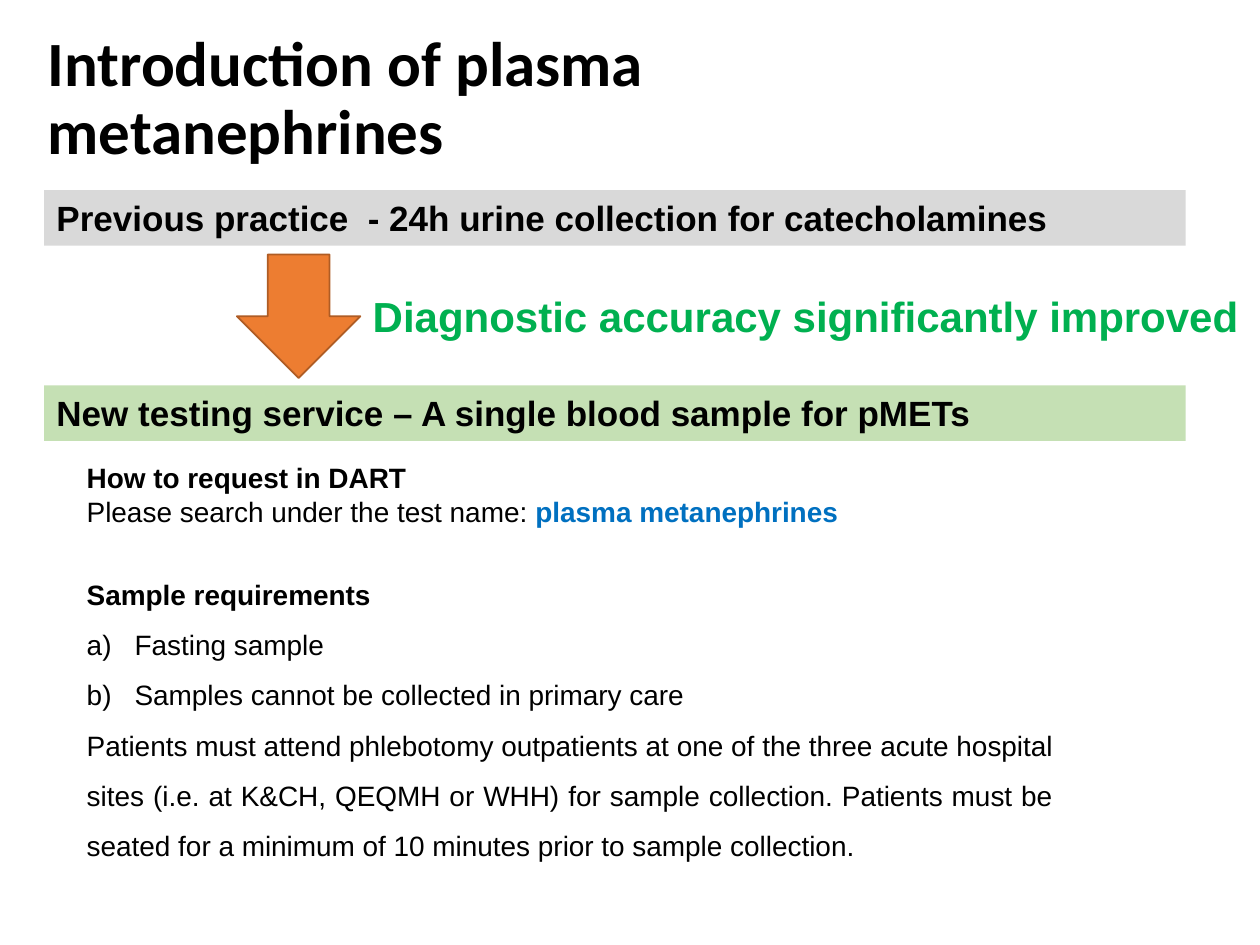
from lxml import etree
from pptx import Presentation
from pptx.dml.color import RGBColor
from pptx.enum.shapes import MSO_SHAPE
from pptx.enum.text import MSO_ANCHOR, PP_ALIGN
from pptx.oxml.ns import qn
from pptx.util import Inches, Pt

RECTANGLE, DOWN_ARROW = MSO_SHAPE.RECTANGLE, MSO_SHAPE.DOWN_ARROW
TOP, MIDDLE = MSO_ANCHOR.TOP, MSO_ANCHOR.MIDDLE
LEFT, JUSTIFY = PP_ALIGN.LEFT, PP_ALIGN.JUSTIFY
COLUMNS, ROWS = 100, 75
BLANK_LAYOUT = 6
BLACK, GREY, PALE_GREEN = "000000", "D9D9D9", "C5E0B4"
GREEN, BLUE, ORANGE, BROWN = "00B050", "0070C0", "ED7D31", "AF5C24"


def color(value):
    return RGBColor.from_string(value)


def write(paragraph, text, size=16, font="Arial", fill=BLACK, bold=False):
    run = paragraph.add_run()
    run.text = text
    run.font.size, run.font.name, run.font.bold = Pt(size), font, bold
    run.font.color.rgb = color(fill)


def letter_item(paragraph, indent=0.38):
    """Number the paragraph a), b), ... with a hanging indent."""
    properties = paragraph._p.get_or_add_pPr()
    properties.set("marL", str(Inches(indent)))
    properties.set("indent", str(-Inches(indent)))
    bullet = etree.SubElement(properties, qn("a:buAutoNum"))
    bullet.set("type", "alphaLcParenR")


class SlideBuilder:
    """Holds the slide and its grid; boxes are (column, row, columns, rows)."""

    def __init__(self, presentation):
        self.slide = presentation.slides.add_slide(presentation.slide_layouts[BLANK_LAYOUT])
        self.column = presentation.slide_width / COLUMNS
        self.row = presentation.slide_height / ROWS

    def place(self, box):
        units = (self.column, self.row) * 2
        return [round(length * unit) for length, unit in zip(box, units)]

    def shape(self, kind, box, fill, line=None):
        shape = self.slide.shapes.add_shape(kind, *self.place(box))
        shape.shadow.inherit = False
        shape.fill.solid()
        shape.fill.fore_color.rgb = color(fill)
        if line:
            shape.line.color.rgb = color(line)
            shape.line.width = Pt(1)
        else:
            shape.line.fill.background()
        return shape

    def banner(self, box, text, fill):
        frame = self.shape(RECTANGLE, box, fill).text_frame
        frame.word_wrap, frame.vertical_anchor = True, TOP
        frame.paragraphs[0].alignment = LEFT
        write(frame.paragraphs[0], text, size=20, bold=True)

    def text_box(self, box, anchor=TOP, wrap=True):
        frame = self.slide.shapes.add_textbox(*self.place(box)).text_frame
        frame.word_wrap, frame.vertical_anchor = wrap, anchor
        return frame

    def label(self, box, text, anchor=TOP, wrap=True, spacing=1.0, **style):
        paragraph = self.text_box(box, anchor, wrap).paragraphs[0]
        paragraph.line_spacing = spacing
        write(paragraph, text, bold=True, **style)

    def body(self, box, paragraphs):
        """Each paragraph is (runs, line spacing, points before, lettered)."""
        frame = self.text_box(box)
        for index, (runs, spacing, before, lettered) in enumerate(paragraphs):
            paragraph = frame.add_paragraph() if index else frame.paragraphs[0]
            paragraph.alignment = JUSTIFY
            paragraph.line_spacing = spacing
            paragraph.space_before = Pt(before)
            if lettered:
                letter_item(paragraph)
            for text, style in runs:
                write(paragraph, text, **style)


def main():
    presentation = Presentation()
    presentation.slide_width, presentation.slide_height = Inches(10), Inches(7.5)
    builder = SlideBuilder(presentation)

    builder.label((2.8, 1.7, 78, 12.5), "Introduction of plasma metanephrines",
                  anchor=MIDDLE, spacing=0.9, size=36, font="Calibri")
    banners = [
        (15.1, "Previous practice  - 24h urine collection for catecholamines", GREY),
        (30.6, "New testing service – A single blood sample for pMETs", PALE_GREEN),
    ]
    for row, text, fill in banners:
        builder.banner((3.5, row, 90.6, 4.4), text, fill)
    builder.shape(DOWN_ARROW, (18.8, 20.2, 9.8, 9.8), ORANGE, line=BROWN)
    builder.label((28.6, 22.6, 71.3, 5), "Diagnostic accuracy significantly improved",
                  wrap=False, size=24, fill=GREEN)

    bold = {"bold": True}
    builder.body((5.9, 36.1, 78.7, 42.4), [
        ([("How to request in DART", bold)], 1.0, 0, False),
        ([("Please search under the test name: ", {}),
          ("plasma metanephrines", {"bold": True, "fill": BLUE})], 1.0, 0, False),
        ([("Sample requirements", bold)], 1.5, 18.4, False),
        ([("Fasting sample", {})], 1.5, 0, True),
        ([("Samples cannot be collected in primary care", {})], 1.5, 0, True),
        ([("Patients must attend phlebotomy outpatients at one of the three acute "
           "hospital sites (i.e. at K&CH, QEQMH or WHH) for sample collection. "
           "Patients must be seated for a minimum of 10 minutes prior to sample "
           "collection.", {})], 1.5, 0, False),
    ])
    presentation.save("out.pptx")


if __name__ == "__main__":
    main()
